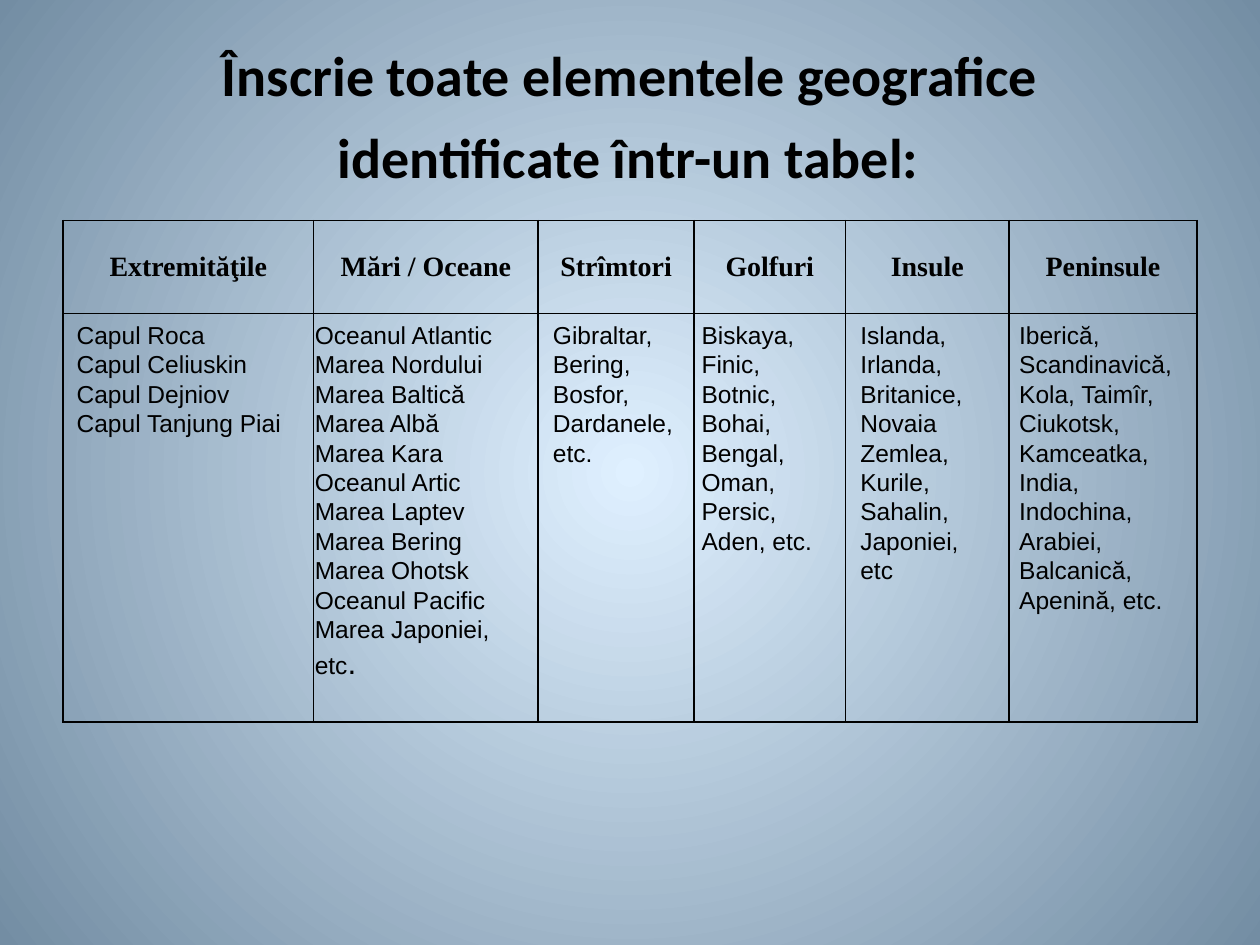
from lxml import etree
from pptx import Presentation
from pptx.dml.color import RGBColor
from pptx.enum import text
from pptx.oxml import ns
from pptx.util import Inches, Pt

BLACK = "000000"
COLUMNS = [
    ("Extremităţile", 1.99),
    ("Mări / Oceane", 1.78),
    ("Strîmtori", 1.24),
    ("Golfuri", 1.2),
    ("Insule", 1.3),
    ("Peninsule", 1.49),
]
LISTS = [
    (0.51, 1.9, ["Capul Roca", "Capul Celiuskin", "Capul Dejniov", "Capul Tanjung Piai"]),
    (2.4, 1.85, [
        "Oceanul Atlantic", "Marea Nordului", "Marea Baltică", "Marea Albă",
        "Marea Kara", "Oceanul Artic", "Marea Laptev", "Marea Bering",
        "Marea Ohotsk", "Oceanul Pacific", "Marea Japoniei, etc",
    ]),
    (4.29, 1.18, ["Gibraltar, Bering, Bosfor, Dardanele, etc."]),
    (5.47, 1.26, ["Biskaya, Finic, Botnic, Bohai, Bengal, Oman, Persic, Aden, etc."]),
    (6.73, 1.26, ["Islanda, Irlanda, Britanice, Novaia Zemlea, Kurile, Sahalin, Japoniei, etc"]),
    (7.99, 1.42, [
        "Iberică, Scandinavică, Kola, Taimîr, Ciukotsk, Kamceatka, India, "
        "Indochina, Arabiei, Balcanică, Apenină, etc."
    ]),
]


def color(value):
    return RGBColor.from_string(value)


def style(para, name, size, bold=False):
    para.font.name = name
    para.font.size = Pt(size)
    para.font.bold = bold
    para.font.color.rgb = color(BLACK)


def add_part(parent, tag, **attributes):
    return etree.SubElement(parent, ns.qn(tag), attributes)


def paint_background(page):
    fill = page.background.fill
    fill.gradient()
    for stop, value in zip(fill.gradient_stops, ("DFF0FF", "738DA3")):
        stop.color.rgb = color(value)
    gradient = page.element.find(".//" + ns.qn("a:gradFill"))
    gradient.remove(gradient.find(ns.qn("a:lin")))
    circle = add_part(gradient, "a:path", path="circle")
    add_part(circle, "a:fillToRect", l="50000", t="50000", r="50000", b="50000")


def add_text(page, left, top, width, height):
    box = page.shapes.add_textbox(Inches(left), Inches(top), Inches(width), Inches(height))
    box.text_frame.word_wrap = True
    return box.text_frame


def add_title(page, left, top, width, height):
    frame = add_text(page, left, top, width, height)
    frame.vertical_anchor = text.MSO_ANCHOR.MIDDLE
    para = frame.paragraphs[0]
    para.alignment = text.PP_ALIGN.CENTER
    style(para, "Calibri", 32, True)
    para.add_run().text = "Înscrie toate elementele geografice"
    para.add_line_break()
    para.add_run().text = " identificate într-un tabel:"
    span = para.add_run()
    span.text = " "
    span.font.size = Pt(40)
    span.font.bold = False


def outline(cell):
    properties = cell._tc.get_or_add_tcPr()
    for side in ("a:lnL", "a:lnR", "a:lnT", "a:lnB"):
        line = add_part(properties, side, w=str(Pt(1)))
        add_part(add_part(line, "a:solidFill"), "a:srgbClr", val=BLACK)


def add_grid(page, left, top, width, heights):
    table = page.shapes.add_table(
        len(heights), len(COLUMNS), Inches(left), Inches(top), Inches(width), Inches(sum(heights))
    ).table
    table.first_row = False
    table.horz_banding = False
    for row, height in zip(table.rows, heights):
        row.height = Inches(height)
    for index, (heading, column_width) in enumerate(COLUMNS):
        table.columns[index].width = Inches(column_width)
        cell = table.cell(0, index)
        cell.text = heading
        cell.vertical_anchor = text.MSO_ANCHOR.MIDDLE
        para = cell.text_frame.paragraphs[0]
        para.alignment = text.PP_ALIGN.CENTER
        style(para, "Times New Roman", 16, True)
    for cell in table.iter_cells():
        outline(cell)
        cell.fill.background()


def add_lists(page, top, height):
    for left, width, names in LISTS:
        frame = add_text(page, left, top, width, height)
        frame.text = "\n".join(names)
        for para in frame.paragraphs:
            style(para, "Arial", 14)
        if names[-1].startswith("Marea"):
            span = frame.paragraphs[-1].add_run()
            span.text = "."
            span.font.size = Pt(18)


def main():
    deck = Presentation()
    deck.slide_width, deck.slide_height = Inches(10), Inches(7.5)
    page = deck.slides.add_slide(deck.slide_layouts[6])
    paint_background(page)
    add_title(page, 0.5, 0.3, 9, 1.25)
    add_grid(page, 0.5, 1.75, 9, (0.74, 3.24))
    add_lists(page, 2.49, 2.73)
    deck.save("out.pptx")


if __name__ == "__main__":
    main()
